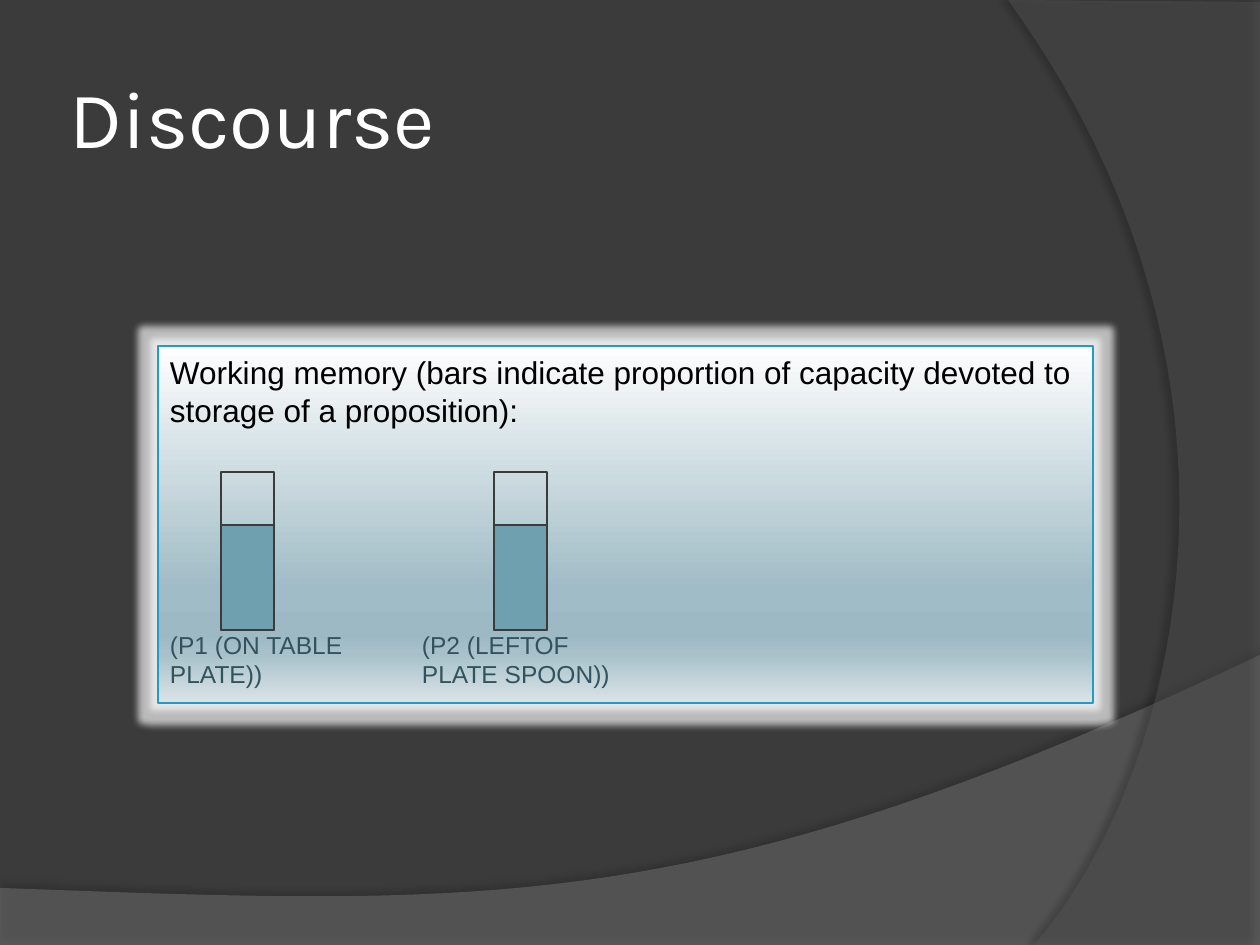
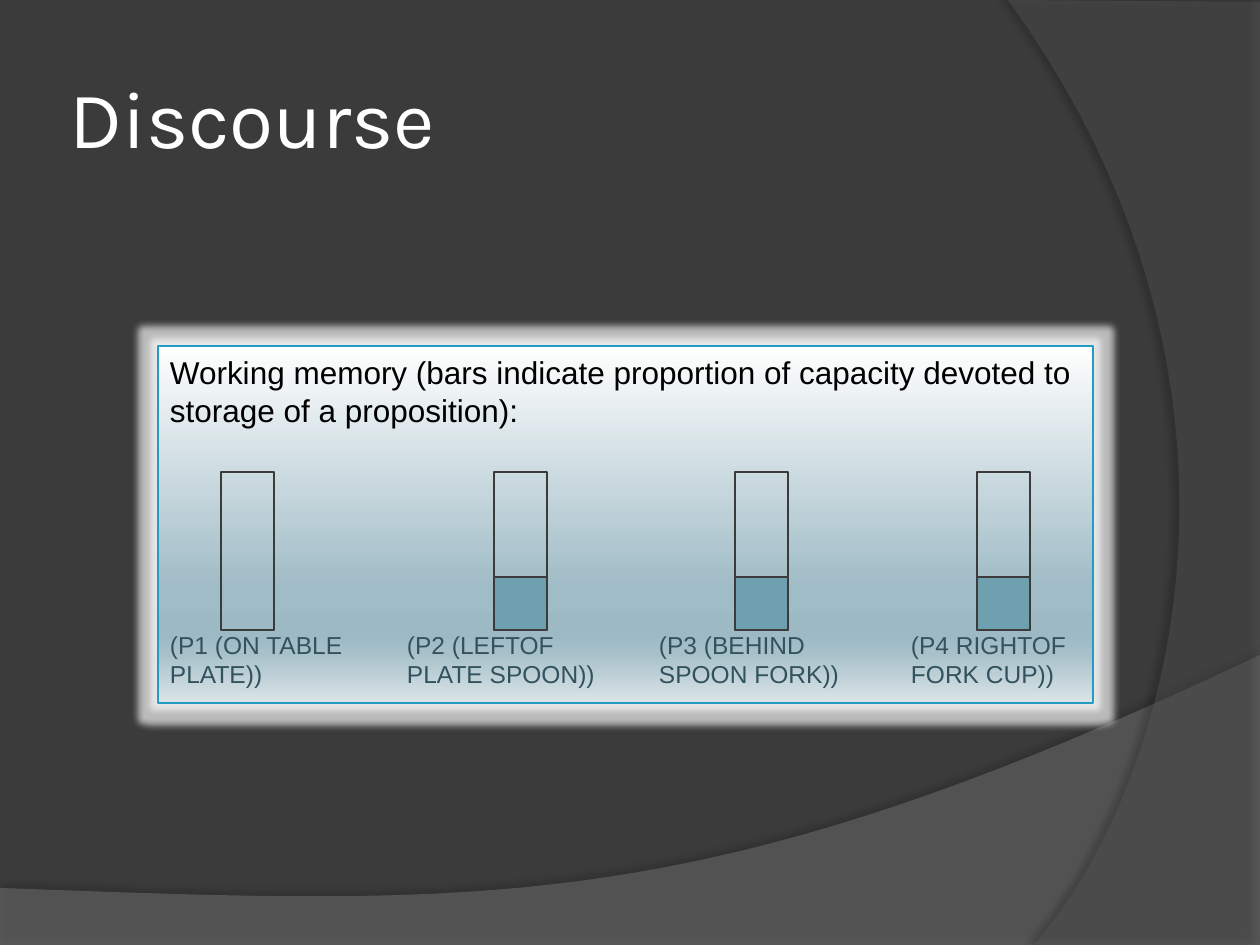
from pptx import Presentation, util as u
from pptx.dml.color import RGBColor
from pptx.enum import shapes as kinds, text as txt
from pptx.oxml import ns
from lxml import etree

EMU_PER_PX = 914400 / 126
PAGE = (1260, 945)
CHARCOAL = RGBColor(0x3B, 0x3B, 0x3B)
WAVE_GREY = RGBColor(0x7C, 0x7C, 0x7C)
ARC_GREY = RGBColor(0x59, 0x59, 0x59)
WHITE = RGBColor(0xFF, 0xFF, 0xFF)
BLACK = RGBColor(0, 0, 0)
BORDER_BLUE = RGBColor(0x23, 0x9B, 0xC2)
LABEL_BLUE = RGBColor(0x32, 0x52, 0x5D)
LOAD_BLUE = RGBColor(0x6E, 0xA0, 0xB0)
PANEL_STOPS = [
    (0, RGBColor(0xFE, 0xFE, 0xFE)),
    (68, RGBColor(0xA0, 0xBC, 0xC6)),
    (81, RGBColor(0x9C, 0xB9, 0xC4)),
    (86, RGBColor(0xA7, 0xC0, 0xC9)),
    (100, RGBColor(0xDA, 0xE4, 0xE7)),
]

TITLE_BOX = (63, 38, 1029, 157)
MEMORY_BOX = (158, 346, 935, 357)
BAR_LEFTS = (63, 336, 577, 819)
BAR_TOP, BAR_WIDTH, BAR_HEIGHT = 126, 53, 158
TITLE_FONT = {"name": "Karla", "size": u.Pt(46)}
HEADING_FONT = {"name": "Arial", "size": u.Pt(18)}
LABEL_FONT = {"name": "Arial", "size": u.Pt(14)}
HEADING_SPACING = {"line_spacing": u.Pt(21.7), "space_before": u.Pt(0)}
LABEL_SPACING = {"line_spacing": u.Pt(16.6), "space_before": u.Pt(0)}
HEADING = "Working memory (bars indicate proportion of capacity devoted to storage of a proposition):"

DISCOURSE_STEPS = [
    {
        "tabs": (252,),
        "labels": ("(P1 (ON TABLE\t(P2 (LEFTOF", "PLATE))\tPLATE SPOON))"),
        "loads": (2 / 3, 2 / 3),
    },
    {
        "tabs": (237, 489, 741),
        "labels": (
            "(P1 (ON TABLE\t(P2 (LEFTOF\t(P3 (BEHIND\t(P4 RIGHTOF",
            "PLATE))\tPLATE SPOON))\tSPOON FORK))\tFORK CUP))",
        ),
        "loads": (0, 1 / 3, 1 / 3, 1 / 3),
    },
]


def px(length):
    return u.Emu(round(length * EMU_PER_PX))


def apply(target, values):
    for name, value in values.items():
        setattr(target, name, value)


def add_xml(parent, tag, **attributes):
    element = etree.SubElement(parent, ns.qn(tag))
    for name, value in attributes.items():
        element.set(name, str(value))
    return element


def add_color(parent, color, alpha=100):
    add_xml(add_xml(parent, "a:srgbClr", val=color), "a:alpha", val=alpha * 1000)


def add_effect(shape, tag, color, alpha, **attributes):
    shape.shadow.inherit = False
    effects = shape.element.spPr.find(ns.qn("a:effectLst"))
    add_color(add_xml(effects, tag, **attributes), color, alpha)


def curve(start, pull_out, pull_in, end, steps=40):
    for step in range(1, steps + 1):
        t = step / steps
        weights = ((1 - t) ** 3, 3 * t * (1 - t) ** 2, 3 * t * t * (1 - t), t ** 3)
        yield tuple(
            sum(w * c for w, c in zip(weights, axis))
            for axis in zip(start, pull_out, pull_in, end)
        )


def add_backdrop(master, canvas, points, color, alpha, shadow_alpha, distance, angle):
    (left, top), *rest = [(px(x), px(y)) for x, y in points]
    builder = canvas.build_freeform(left, top)
    builder.add_line_segments(rest, close=True)
    band = builder.convert_to_shape()
    band.line.fill.background()
    band.fill.solid()
    band.fill.fore_color.rgb = color
    tint = band.element.spPr.find(ns.qn("a:solidFill"))[0]
    add_xml(tint, "a:alpha", val=alpha * 1000)
    add_effect(band, "a:outerShdw", BLACK, shadow_alpha, blurRad=u.Pt(4),
               dist=u.Pt(distance), dir=angle * 60000, rotWithShape=0)
    tree = master.shapes.element
    tree.insert(len(tree) - len(master.placeholders), band.element)


def style_master(master, layout, canvas):
    master.background.fill.solid()
    master.background.fill.fore_color.rgb = CHARCOAL
    width, height = PAGE
    wave = [(0, 888), (0, height), PAGE, (width, 655),
            *curve((width, 655), (704, 919), (493, 906), (0, 888))]
    arc = [(width, 2), PAGE, (1034, height),
           *curve((1034, height), (1178, 780), (1283, 378), (1008, 0))]
    add_backdrop(master, canvas, wave, WAVE_GREY, 45, 35, 3.5, 270)
    add_backdrop(master, canvas, arc, ARC_GREY, 40, 45, 4, 180)
    place(layout.placeholders[0], TITLE_BOX)


def place(shape, box):
    apply(shape, dict(zip(("left", "top", "width", "height"), map(px, box))))


def add_title(slide, wording):
    frame = slide.shapes.title.text_frame
    margins = ("margin_left", "margin_top", "margin_right", "margin_bottom")
    apply(frame, dict.fromkeys(margins, px(6)))
    frame.vertical_anchor = txt.MSO_ANCHOR.MIDDLE
    write(frame.paragraphs[0], wording, TITLE_FONT, WHITE, {})


def write(paragraph, wording, font, color, spacing):
    run = paragraph.add_run()
    run.text = wording
    apply(run.font, font)
    run.font.color.rgb = color
    apply(paragraph, {"alignment": txt.PP_ALIGN.LEFT, **spacing})


def add_rectangle(slide, box, line_color, fill_color=None):
    rectangle = slide.shapes.add_shape(kinds.MSO_SHAPE.RECTANGLE, *map(px, box))
    rectangle.shadow.inherit = False
    rectangle.line.color.rgb = line_color
    rectangle.line.width = u.Pt(0.75)
    if fill_color is None:
        rectangle.fill.background()
    else:
        rectangle.fill.solid()
        rectangle.fill.fore_color.rgb = fill_color
    return rectangle


def add_memory_panel(slide, box, tabs, labels):
    panel = add_rectangle(slide, box, BORDER_BLUE)
    panel.fill.gradient()
    panel.fill.gradient_angle = 270
    stops = panel.element.spPr.find(ns.qn("a:gradFill")).find(ns.qn("a:gsLst"))
    for stop in list(stops):
        stops.remove(stop)
    for percent, color in PANEL_STOPS:
        add_color(add_xml(stops, "a:gs", pos=percent * 1000), color)
    add_effect(panel, "a:glow", WHITE, 65, rad=px(14))

    frame = panel.text_frame
    apply(frame, {"word_wrap": True, "vertical_anchor": txt.MSO_ANCHOR.TOP,
                  "margin_left": px(12), "margin_right": px(12),
                  "margin_top": px(7), "margin_bottom": px(6)})
    write(frame.paragraphs[0], HEADING, HEADING_FONT, BLACK, HEADING_SPACING)
    for row, label in enumerate(labels):
        paragraph = frame.add_paragraph()
        write(paragraph, label, LABEL_FONT, LABEL_BLUE, LABEL_SPACING)
        if row == 0:
            paragraph.space_before = u.Pt(115)
        tab_list = add_xml(paragraph._p.get_or_add_pPr(), "a:tabLst")
        for tab in tabs:
            add_xml(tab_list, "a:tab", pos=px(tab), algn="l")


def add_capacity_bars(slide, box, loads):
    left, top = box[:2]
    for bar_left, load in zip(BAR_LEFTS, loads):
        x, y = left + bar_left, top + BAR_TOP
        add_rectangle(slide, (x, y, BAR_WIDTH, BAR_HEIGHT), CHARCOAL)
        if load:
            used = round(BAR_HEIGHT * load)
            used_box = (x, y + BAR_HEIGHT - used, BAR_WIDTH, used)
            add_rectangle(slide, used_box, CHARCOAL, LOAD_BLUE)


def add_discourse_slide(slide, step):
    add_title(slide, "Discourse")
    add_memory_panel(slide, MEMORY_BOX, step["tabs"], step["labels"])
    add_capacity_bars(slide, MEMORY_BOX, step["loads"])


def main():
    deck = Presentation()
    deck.slide_width, deck.slide_height = map(px, PAGE)
    layout = deck.slide_layouts[5]
    slides = [deck.slides.add_slide(layout) for _ in DISCOURSE_STEPS]
    style_master(deck.slide_master, layout, slides[0].shapes)
    for slide, step in zip(slides, DISCOURSE_STEPS):
        add_discourse_slide(slide, step)
    deck.save("out.pptx")


if __name__ == "__main__":
    main()
